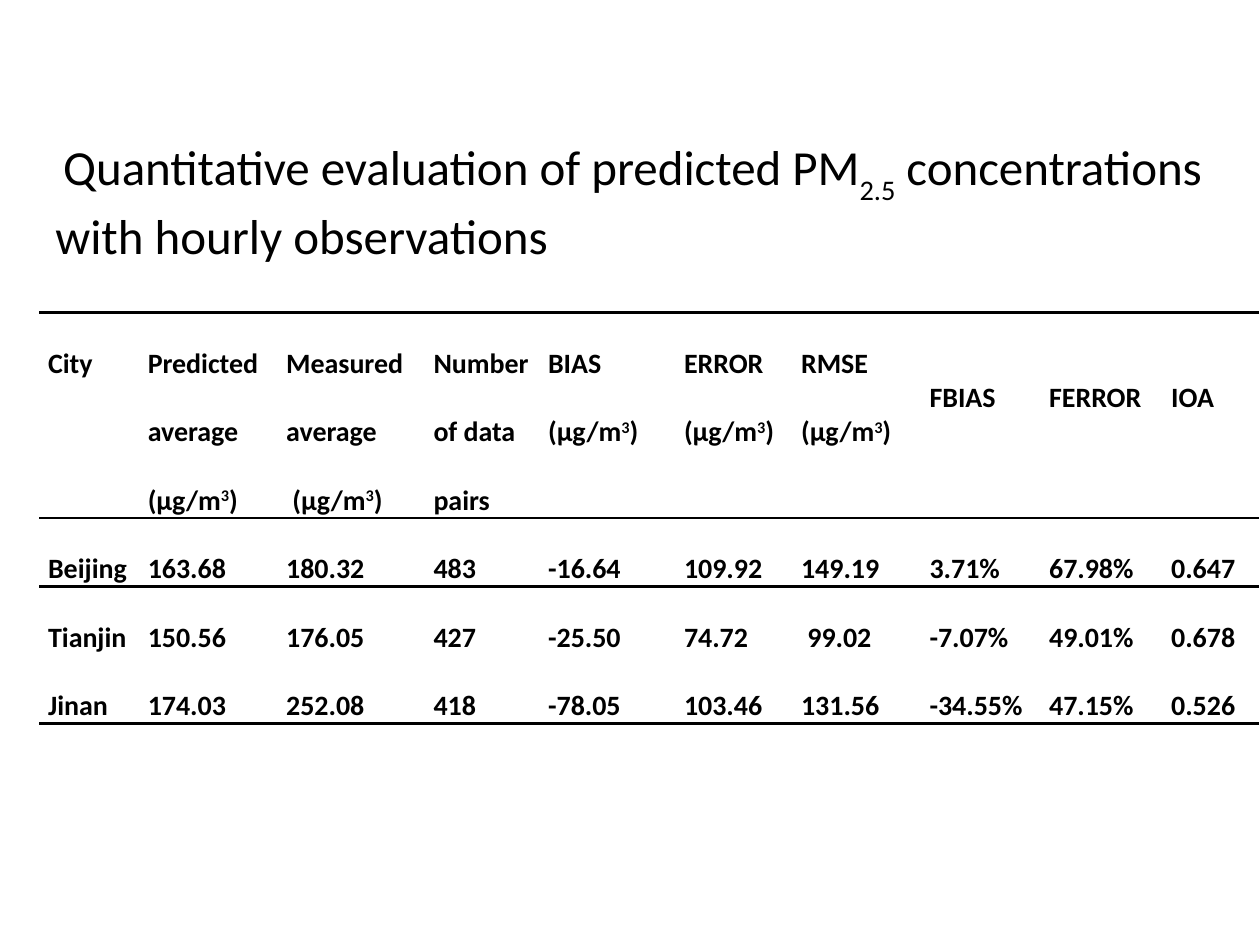
from lxml.etree import SubElement
from pptx import Presentation
from pptx.dml.color import RGBColor
from pptx.enum.text import MSO_ANCHOR, MSO_AUTO_SIZE, PP_ALIGN
from pptx.oxml import parse_xml
from pptx.oxml.ns import nsdecls, qn
from pptx.util import Cm, Pt

INK = "000000"
UNIT = "(μg/m^3^)"
NO_GRID = "{2D5ABB26-0587-4C30-8999-92F81FD0307C}"


def add_run(paragraph, text, size, bold=False, baseline=0):
    run = paragraph.add_run()
    run.text = text
    run.font.name = "Calibri"
    run.font.size = Pt(size)
    run.font.bold = bold
    run.font.color.rgb = RGBColor.from_string(INK)
    if baseline:
        run.font._element.set("baseline", str(baseline * 1000))


def add_rule(cell, side):
    rule = parse_xml(f'<a:{side} {nsdecls("a")} w="{Pt(1.5)}"/>')
    fill = SubElement(rule, qn("a:solidFill"))
    SubElement(fill, qn("a:srgbClr"), val=INK)
    cell._tc.get_or_add_tcPr().append(rule)


prs = Presentation()
prs.slide_width, prs.slide_height = Cm(25.4), Cm(19.05)
slide = prs.slides.add_slide(prs.slide_layouts[5])

heading = slide.shapes.title
heading.left, heading.top = Cm(0.86), Cm(2.72)
heading.width, heading.height = Cm(24.54), Cm(2.64)
heading.text_frame.word_wrap = True
heading.text_frame.auto_size = MSO_AUTO_SIZE.NONE
heading.text_frame.vertical_anchor = MSO_ANCHOR.MIDDLE
heading_line = heading.text_frame.paragraphs[0]
heading_line.alignment = PP_ALIGN.LEFT
add_run(heading_line, " ", 20)
add_run(heading_line, "Quantitative evaluation of predicted PM", 28)
add_run(heading_line, "2.5", 28, baseline=-30)
add_run(heading_line, " concentrations with hourly observations", 28)

evaluation = [
    ["City", f"Predicted average {UNIT}", f"Measured average\n {UNIT}",
     "Number of data pairs", f"BIAS\n{UNIT}", f"ERROR\n{UNIT}",
     f"RMSE\n{UNIT}", "FBIAS", "FERROR", "IOA"],
    ["Beijing", "163.68", "180.32", "483", "-16.64", "109.92", "149.19",
     "3.71%", "67.98%", "0.647"],
    ["Tianjin", "150.56", "176.05", "427", "-25.50", "74.72", " 99.02",
     "-7.07%", "49.01%", "0.678"],
    ["Jinan", "174.03", "252.08", "418", "-78.05", "103.46", "131.56",
     "-34.55%", "47.15%", "0.526"],
]
column_widths = [2.01, 2.79, 2.97, 2.31, 2.74, 2.36, 2.59, 2.41, 2.46, 1.96]
row_heights = [3.84, 1.22, 1.22, 1.22]
row_rules = [["lnT", "lnB"], ["lnT"], [], ["lnB"]]
lowered_headers = ["FBIAS", "FERROR", "IOA"]

scores = slide.shapes.add_table(
    len(row_heights), len(column_widths), Cm(0.79), Cm(6.3),
    Cm(sum(column_widths)), Cm(sum(row_heights))).table
scores._tbl.tblPr.find(qn("a:tableStyleId")).text = NO_GRID
scores.horz_banding = False
scores.first_row = False
for column, width in zip(scores.columns, column_widths):
    column.width = Cm(width)

for row, height, rules, entries in zip(scores.rows, row_heights, row_rules, evaluation):
    row.height = Cm(height)
    for cell, entry in zip(row.cells, entries):
        for side in rules:
            add_rule(cell, side)
        cell.fill.background()
        cell.margin_left = cell.margin_right = Cm(0.18)
        cell.margin_top = Cm(0.69 if entry in lowered_headers else 0)
        cell.margin_bottom = 0
        cell.vertical_anchor = MSO_ANCHOR.TOP
        for number, line in enumerate(entry.split("\n")):
            frame = cell.text_frame
            paragraph = frame.add_paragraph() if number else frame.paragraphs[0]
            paragraph.line_spacing = 2.0
            paragraph.alignment = (
                PP_ALIGN.LEFT if entry.startswith("Number") else PP_ALIGN.JUSTIFY)
            for position, part in enumerate(line.split("^")):
                add_run(paragraph, part, 16, True, 30 * (position % 2))

prs.save("out.pptx")
